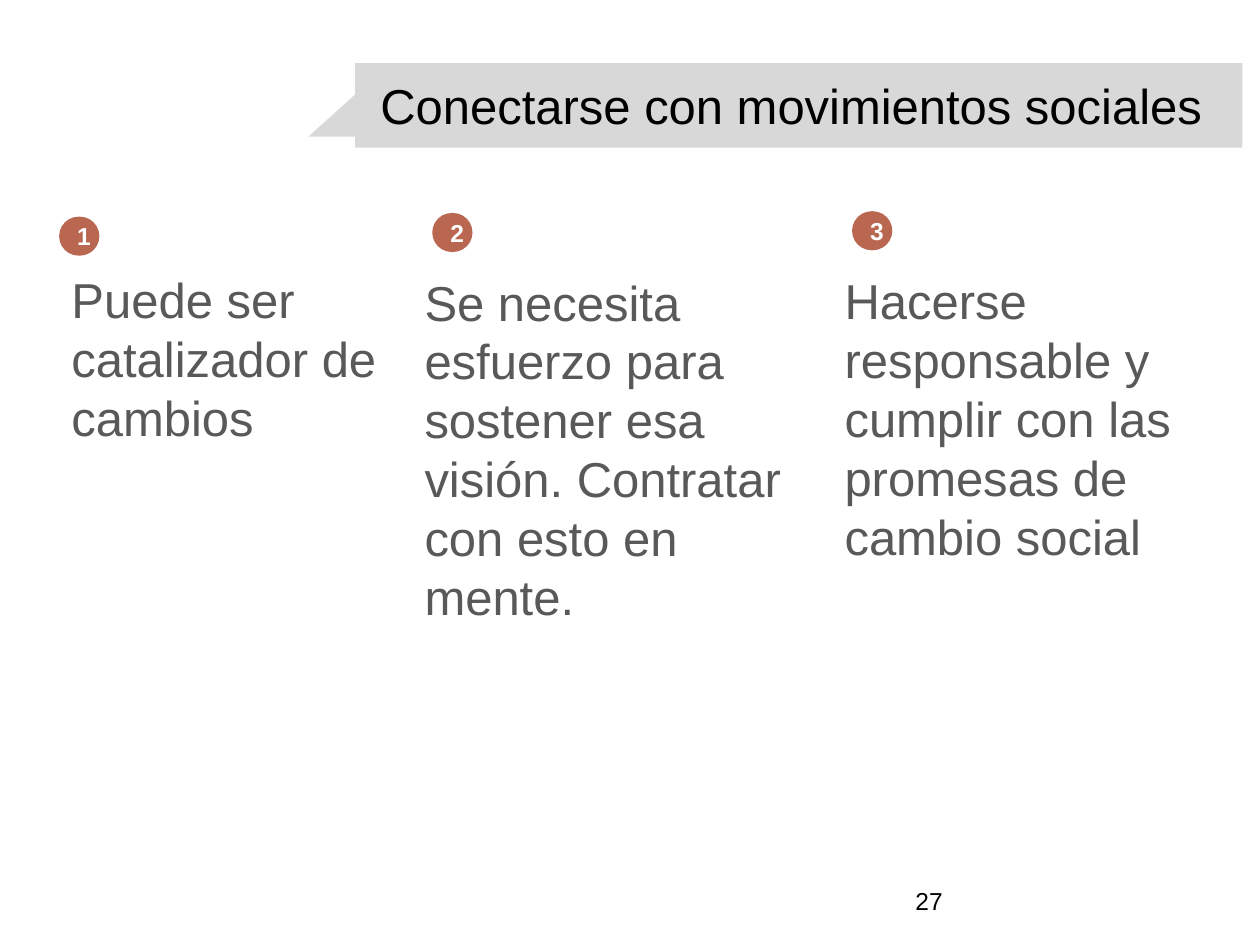
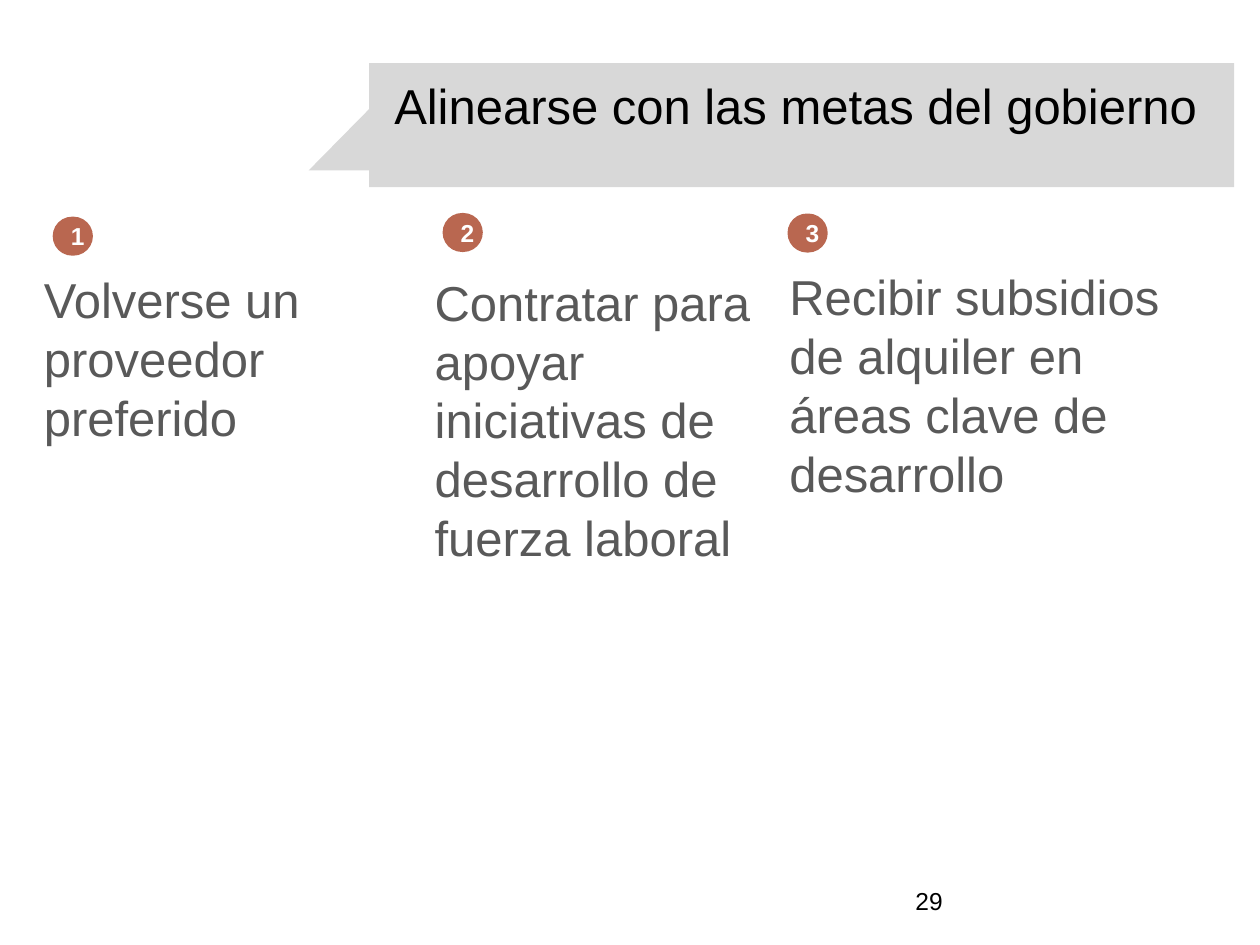
from dataclasses import dataclass

from pptx import Presentation
from pptx.dml.color import RGBColor
from pptx.enum.shapes import MSO_SHAPE
from pptx.enum.text import MSO_ANCHOR, PP_ALIGN
from pptx.util import Pt

# Shared style
FONT = "Arial"
BAND_GRAY, BADGE_RED = "D8D8D8", "B96750"
BODY_GRAY, BLACK, WHITE = "595959", "000000", "FFFFFF"
BAND_TOP, TAIL_LEFT = 36, 176.4
BADGE_WIDTH, BADGE_HEIGHT = 23, 22.3


@dataclass
class Box:
    left: float
    top: float
    width: float
    height: float

    def lengths(self) -> tuple:
        return Pt(self.left), Pt(self.top), Pt(self.width), Pt(self.height)


@dataclass
class Column:
    text: str
    box: Box
    badge_left: float
    badge_top: float


@dataclass
class Page:
    title: str
    number: int
    band_left: float
    band_width: float
    band_height: float
    tail_top: float
    tail_height: float
    columns: list[Column]


PAGES = [
    Page("Conectarse con movimientos sociales", 27, 203, 507, 48.4, 54, 24, [
        Column("Puede ser catalizador de cambios",
               Box(33.8, 150.5, 203.8, 108.7), 33.8, 123.8),
        Column("Se necesita esfuerzo para sostener esa visión. Contratar con esto en mente.",
               Box(235.5, 152, 238.3, 213), 247, 121.7),
        Column("Hacerse responsable y cumplir con las promesas de cambio social",
               Box(475.5, 151.2, 238.3, 190), 486.9, 120.7),
    ]),
    Page("Alinearse con las metas del gobierno", 29, 210.9, 494.4, 71, 62.4, 35, [
        Column("Volverse un proveedor preferido",
               Box(18, 150.5, 219.6, 75), 30.1, 123.8),
        Column("Contratar para apoyar iniciativas de desarrollo de fuerza laboral",
               Box(241.3, 152, 208.8, 143.3), 252.9, 121.7),
        Column("Recibir subsidios de alquiler en áreas clave de desarrollo",
               Box(444, 149, 235.4, 143.3), 450, 122),
    ]),
]


def color(value: str) -> RGBColor:
    return RGBColor.from_string(value)


def write_text(shape, text: str, *, size: float = 28, fill: str = BODY_GRAY,
               bold: bool = False, align=PP_ALIGN.LEFT, anchor=MSO_ANCHOR.TOP,
               inset_x: float = 7.2, inset_y: float = 3.6) -> None:
    frame = shape.text_frame
    frame.word_wrap = True
    frame.vertical_anchor = anchor
    frame.margin_left = frame.margin_right = Pt(inset_x)
    frame.margin_top = frame.margin_bottom = Pt(inset_y)
    paragraph = frame.paragraphs[0]
    paragraph.alignment = align
    run = paragraph.add_run()
    run.text = text
    run.font.name, run.font.size, run.font.bold = FONT, Pt(size), bold
    run.font.color.rgb = color(fill)


def add_filled(slide, kind, box: Box, fill: str):
    shape = slide.shapes.add_shape(kind, *box.lengths())
    shape.shadow.inherit = False
    shape.fill.solid()
    shape.fill.fore_color.rgb = color(fill)
    shape.line.fill.background()
    return shape


def add_title(slide, page: Page) -> None:
    band = add_filled(slide, MSO_SHAPE.RECTANGLE,
                      Box(page.band_left, BAND_TOP, page.band_width, page.band_height),
                      BAND_GRAY)
    write_text(band, page.title, fill=BLACK, inset_x=14.4, inset_y=7.2)
    tail = add_filled(slide, MSO_SHAPE.RIGHT_TRIANGLE,
                      Box(TAIL_LEFT, page.tail_top,
                          page.band_left - TAIL_LEFT, page.tail_height),
                      BAND_GRAY)
    tail.element.spPr.get_or_add_xfrm().set("flipH", "1")


def add_column(slide, column: Column, number: int) -> None:
    body = slide.shapes.add_textbox(*column.box.lengths())
    write_text(body, column.text)
    badge = add_filled(slide, MSO_SHAPE.ROUNDED_RECTANGLE,
                       Box(column.badge_left, column.badge_top, BADGE_WIDTH, BADGE_HEIGHT),
                       BADGE_RED)
    badge.adjustments[0] = 0.5
    write_text(badge, str(number), size=14, fill=WHITE, bold=True,
               align=PP_ALIGN.CENTER, anchor=MSO_ANCHOR.MIDDLE)


def add_page_number(slide, number: int) -> None:
    box = slide.shapes.add_textbox(*Box(516, 500.5, 168, 28.8).lengths())
    write_text(box, str(number), size=14, fill=BLACK, anchor=MSO_ANCHOR.MIDDLE)


def main() -> None:
    presentation = Presentation()
    presentation.slide_width, presentation.slide_height = Pt(720), Pt(540)
    for page in PAGES:
        slide = presentation.slides.add_slide(presentation.slide_layouts[6])
        add_title(slide, page)
        for number, column in enumerate(page.columns, start=1):
            add_column(slide, column, number)
        add_page_number(slide, page.number)
    presentation.save("out.pptx")


if __name__ == "__main__":
    main()
